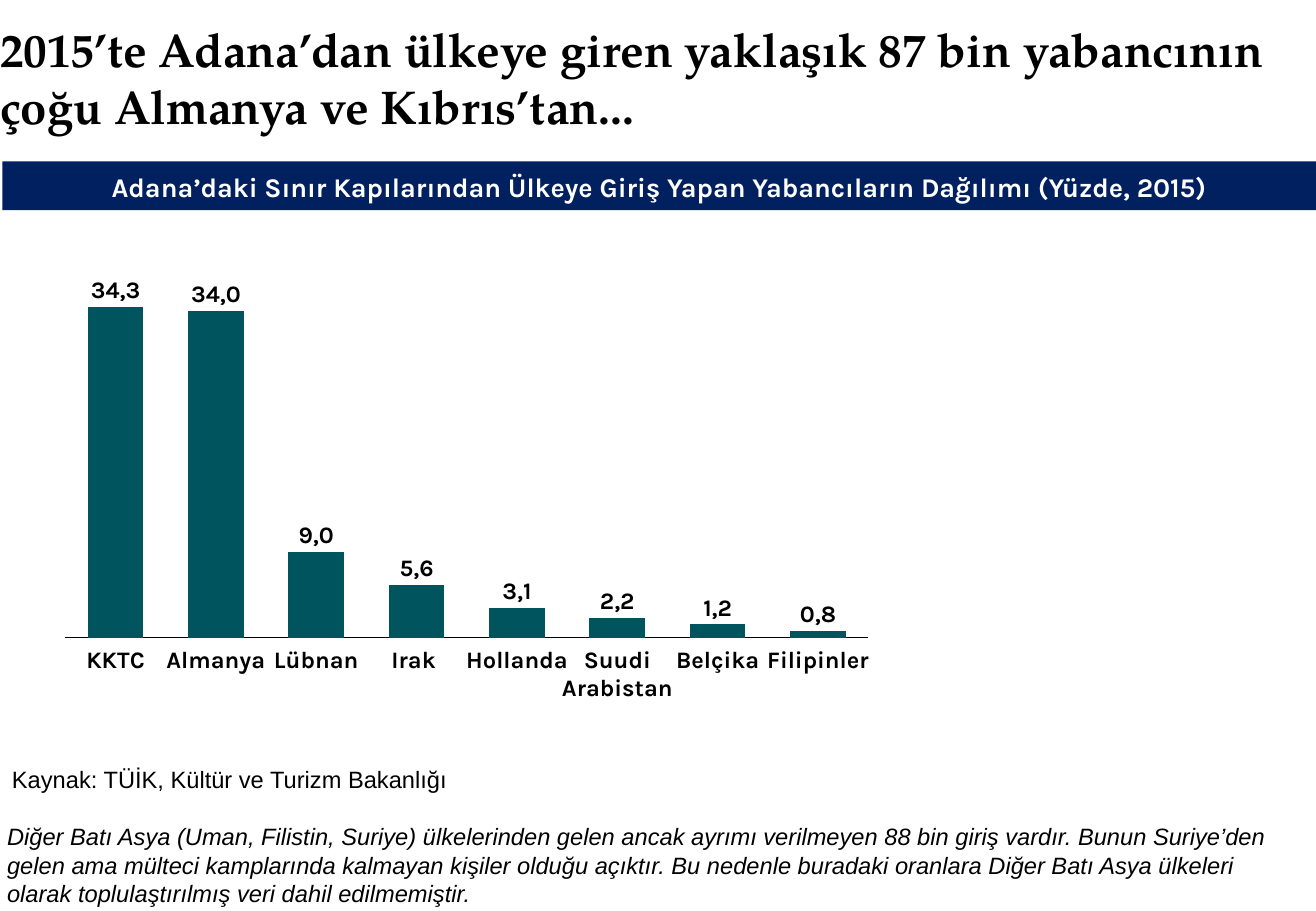
import pptx
import pptx.chart.data
import pptx.dml.color
import pptx.enum.chart
import pptx.enum.shapes
import pptx.enum.text
import pptx.oxml
import pptx.oxml.ns
import pptx.util

Inches, Pt = pptx.util.Inches, pptx.util.Pt
PP = pptx.enum.text.PP_ALIGN
ANCHOR = pptx.enum.text.MSO_ANCHOR
FIT = pptx.enum.text.MSO_AUTO_SIZE

TITLE = "2015’te Adana’dan ülkeye giren yaklaşık 87 bin yabancının çoğu Almanya ve Kıbrıs’tan..."
BANNER = "Adana’daki Sınır Kapılarından Ülkeye Giriş Yapan Yabancıların Dağılımı (Yüzde, 2015)"
SOURCE = "Kaynak: TÜİK, Kültür ve Turizm Bakanlığı"
NOTE = (
    "Diğer Batı Asya (Uman, Filistin, Suriye) ülkelerinden gelen ancak ayrımı "
    "verilmeyen 88 bin giriş vardır. Bunun Suriye’den gelen ama mülteci "
    "kamplarında kalmayan kişiler olduğu açıktır. Bu nedenle buradaki oranlara "
    "Diğer Batı Asya ülkeleri olarak toplulaştırılmış veri dahil edilmemiştir."
)
# country, share in percent, bar height (largest = 100), name width
BARS = [
    ("KKTC", "34,3", 100, 0.53),
    ("Almanya", "34,0", 99, 0.86),
    ("Lübnan", "9,0", 26, 0.74),
    ("Irak ", "5,6", 16, 0.48),
    ("Hollanda", "3,1", 9, 0.88),
    ("Suudi Arabistan", "2,2", 6, 0.95),
    ("Belçika", "1,2", 4, 0.72),
    ("Filipinler", "0,8", 2, 0.87),
]
COLORS = {"ink": "000000", "bar": "00545E", "navy": "002060", "white": "FFFFFF"}
CHART = (0.45, 2.44, 6.79, 2.9)
PLOT = {"x": 0.013, "y": 0.031, "w": 0.973, "h": 0.938}


def color(name):
    return pptx.dml.color.RGBColor.from_string(COLORS[name])


def write(shape, text, face, size, ink="ink", bold=False, italic=False,
          align=PP.LEFT, anchor=ANCHOR.TOP, wrap=True, inset=(0.1, 0.05)):
    frame = shape.text_frame
    frame.auto_size = FIT.NONE
    frame.word_wrap = wrap
    frame.vertical_anchor = anchor
    frame.margin_left = frame.margin_right = Inches(inset[0])
    frame.margin_top = frame.margin_bottom = Inches(inset[1])
    para = frame.paragraphs[0]
    para.text = text
    para.alignment = align
    font = para.font
    font.name, font.size, font.bold, font.italic = face, Pt(size), bold, italic
    font.color.rgb = color(ink)
    return para


def add_text(slide, box, text, face="Arial", size=14, **style):
    shape = slide.shapes.add_textbox(*map(Inches, box))
    write(shape, text, face, size, **style)


def add_bars(slide):
    data = pptx.chart.data.CategoryChartData()
    data.categories = [str(i) for i in range(1, len(BARS) + 1)]
    data.add_series("Series 1", [height for _, _, height, _ in BARS])
    kind = pptx.enum.chart.XL_CHART_TYPE.COLUMN_STACKED
    chart = slide.shapes.add_chart(kind, *map(Inches, CHART), data).chart
    chart.has_legend = chart.has_title = False
    chart.font.name, chart.font.size = "Arial", Pt(10)
    chart.font.color.rgb = color("ink")

    plot = chart.plots[0]
    plot.gap_width, plot.overlap, plot.vary_by_categories = 80, 100, False
    fill = plot.series[0].format.fill
    fill.solid()
    fill.fore_color.rgb = color("bar")

    values, names = chart.value_axis, chart.category_axis
    values.minimum_scale, values.maximum_scale = 0, 100
    values.has_major_gridlines = values.visible = False
    names.tick_label_position = pptx.enum.chart.XL_TICK_LABEL_POSITION.NONE
    names.major_tick_mark = pptx.enum.chart.XL_TICK_MARK.NONE
    names.format.line.color.rgb = color("ink")
    names.format.line.width = Pt(0.75)

    area = chart._chartSpace.chart.plotArea
    for old in area.findall(pptx.oxml.ns.qn("c:layout")):
        area.remove(old)
    parts = '<c:layoutTarget val="inner"/><c:xMode val="edge"/><c:yMode val="edge"/>'
    parts += "".join(f'<c:{key} val="{val}"/>' for key, val in PLOT.items())
    area.insert(0, pptx.oxml.parse_xml(
        f'<c:layout {pptx.oxml.ns.nsdecls("c")}>'
        f"<c:manualLayout>{parts}</c:manualLayout></c:layout>"))


def add_labels(slide):
    left, top, width, height = CHART
    start = left + PLOT["x"] * width
    step = PLOT["w"] * width / len(BARS)
    tall = PLOT["h"] * height
    base = top + PLOT["y"] * height + tall
    style = dict(face="Karla", bold=True, align=PP.CENTER)
    for i, (name, share, level, wide) in enumerate(BARS):
        mid = start + (i + 0.5) * step
        two = len(name) > 12
        add_text(slide, (mid - wide / 2, 5.31, wide, 0.47 if two else 0.23),
                 name, wrap=two, inset=(0, 0), **style)
        span = 0.49 if len(share) > 3 else 0.36
        add_text(slide, (mid - span / 2, base - tall * level / 100 - 0.26, span, 0.23),
                 share, wrap=False, inset=(0.03, 0), anchor=ANCHOR.BOTTOM, **style)


def main():
    deck = pptx.Presentation()
    deck.slide_width, deck.slide_height = Inches(10.83), Inches(7.5)
    slide = deck.slides.add_slide(deck.slide_layouts[5])

    title = slide.shapes.title
    title.left, title.top, title.width, title.height = map(Inches, (0, 0.17, 10.83, 0.92))
    write(title, TITLE, "TeX Gyre Pagella", 28, bold=True, inset=(0, 0))

    add_bars(slide)
    add_labels(slide)

    rect = pptx.enum.shapes.MSO_SHAPE.RECTANGLE
    banner = slide.shapes.add_shape(rect, *map(Inches, (0.02, 1.33, 10.81, 0.4)))
    banner.shadow.inherit = False
    banner.fill.solid()
    banner.fill.fore_color.rgb = color("navy")
    banner.line.fill.background()
    para = write(banner, BANNER, "Karla", 16, ink="white", bold=True, align=PP.CENTER)
    para.line_spacing, para.space_after = 1.1, Pt(9)

    add_text(slide, (-0.04, 6.72, 10.79, 0.81), NOTE, italic=True)
    add_text(slide, (0, 6.25, 9.42, 0.34), SOURCE)
    deck.save("out.pptx")


if __name__ == "__main__":
    main()
